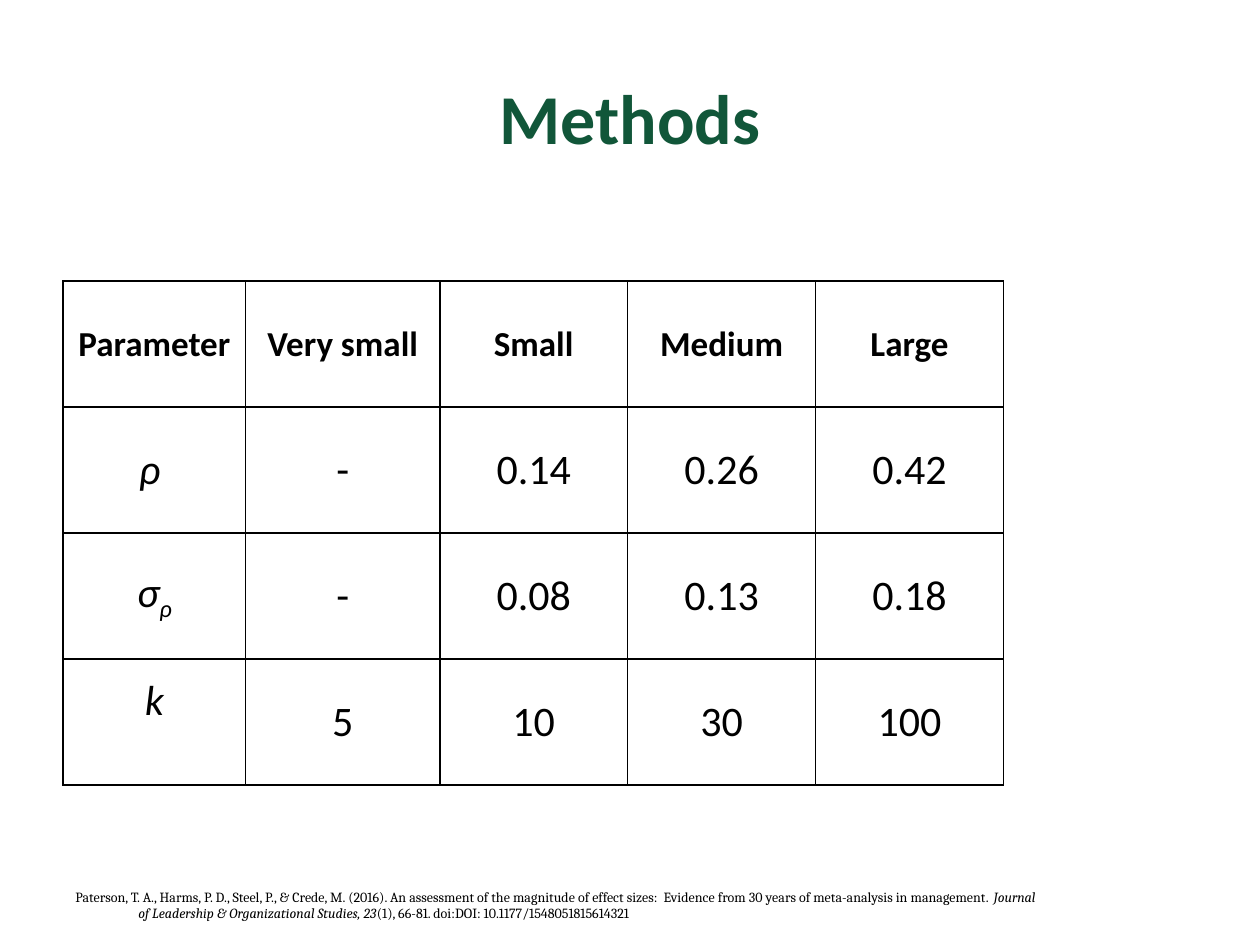
from dataclasses import dataclass

from lxml import etree
from pptx import Presentation
from pptx.dml.color import RGBColor
from pptx.enum import text as t
from pptx.oxml import ns
from pptx.util import Pt

GREEN = RGBColor(0x11, 0x56, 0x39)
BLACK = RGBColor(0, 0, 0)


@dataclass
class Run:
    text: str
    size: float = 24
    bold: bool = False
    ital: bool = False
    base: int = 0  # baseline shift in percent
    face: str = "Calibri"
    color: RGBColor = BLACK


def write(para, runs: list[Run]) -> None:
    for item in runs:
        run = para.add_run()
        run.text = item.text
        font = run.font
        font.name, font.size = item.face, Pt(item.size)
        font.bold, font.italic = item.bold, item.ital
        font.color.rgb = item.color
        if item.base:
            run._r.get_or_add_rPr().set("baseline", str(item.base * 1000))


def edge(cell, width: float) -> None:
    """Draw a black line on all four sides of a cell."""
    props = cell._tc.get_or_add_tcPr()
    for side in ("a:lnL", "a:lnR", "a:lnT", "a:lnB"):
        line = etree.SubElement(props, ns.qn(side), w=str(Pt(width)))
        fill = etree.SubElement(line, ns.qn("a:solidFill"))
        etree.SubElement(fill, ns.qn("a:srgbClr"), val=str(BLACK))


def style(cell, runs: list[Run]) -> None:
    edge(cell, 1)
    cell.fill.background()
    cell.vertical_anchor = t.MSO_ANCHOR.MIDDLE
    para = cell.text_frame.paragraphs[0]
    para.alignment = t.PP_ALIGN.CENTER
    write(para, runs)


def place(shape, left: float, top: float, width: float, height: float) -> None:
    shape.left, shape.top = Pt(left), Pt(top)
    shape.width, shape.height = Pt(width), Pt(height)


HEADS = ["Parameter", "Very small", "Small", "Medium", "Large"]
ROWS = [
    ([Run("ρ ", ital=True)], ["-", "0.14", "0.26", "0.42"]),
    ([Run("σ", ital=True), Run("ρ", ital=True, base=-25)],
     ["-", "0.08", "0.13", "0.18"]),
    ([Run("k", ital=True)], ["5", "10", "30", "100"]),
]
WIDTHS = [104.4, 110.9, 107.4, 107.4, 107.4]
HIGH = 72
LEFT = 36


def main() -> None:
    deck = Presentation()
    deck.slide_width, deck.slide_height = Pt(720), Pt(540)
    slide = deck.slides.add_slide(deck.slide_layouts[5])

    # Title
    title = slide.shapes.title
    place(title, LEFT, 21.6, 648, 90)
    title.text_frame.vertical_anchor = t.MSO_ANCHOR.MIDDLE
    head = title.text_frame.paragraphs[0]
    head.alignment = t.PP_ALIGN.CENTER
    write(head, [Run("Methods", 40, bold=True, color=GREEN)])

    # Parameter table
    grid = [[[Run(name, 20, bold=True)] for name in HEADS]]
    grid += [[sign] + [[Run(val)] for val in vals] for sign, vals in ROWS]
    table = slide.shapes.add_table(
        len(grid), len(HEADS), Pt(LEFT), Pt(160.6),
        Pt(sum(WIDTHS)), Pt(HIGH * len(grid))).table
    table.first_row = table.horz_banding = False
    for col, width in zip(table.columns, WIDTHS):
        col.width = Pt(width)
    for row, cells in zip(table.rows, grid):
        row.height = Pt(HIGH)
        for cell, runs in zip(row.cells, cells):
            style(cell, runs)
    table.cell(3, 0).margin_bottom = Pt(28)  # lifts the k

    # Reference with hanging indent
    note = slide.shapes.add_textbox(Pt(LEFT), Pt(504), Pt(567.4), Pt(26.6))
    note.text_frame.word_wrap = True
    para = note.text_frame.paragraphs[0]
    props = para._p.get_or_add_pPr()
    props.set("marL", str(Pt(36)))
    props.set("indent", str(-Pt(36)))
    write(para, [
        Run("Paterson, T. A., Harms, P. D., Steel, P., & Crede, M. (2016). "
            "An assessment of the magnitude of effect sizes:  Evidence from "
            "30 years of meta-analysis in management. ", 8, face="Cambria"),
        Run("Journal of Leadership & Organizational Studies, 23", 8,
            ital=True, face="Cambria"),
        Run("(1), 66-81. doi:DOI: 10.1177/1548051815614321", 8,
            face="Cambria"),
    ])

    deck.save("out.pptx")


if __name__ == "__main__":
    main()
